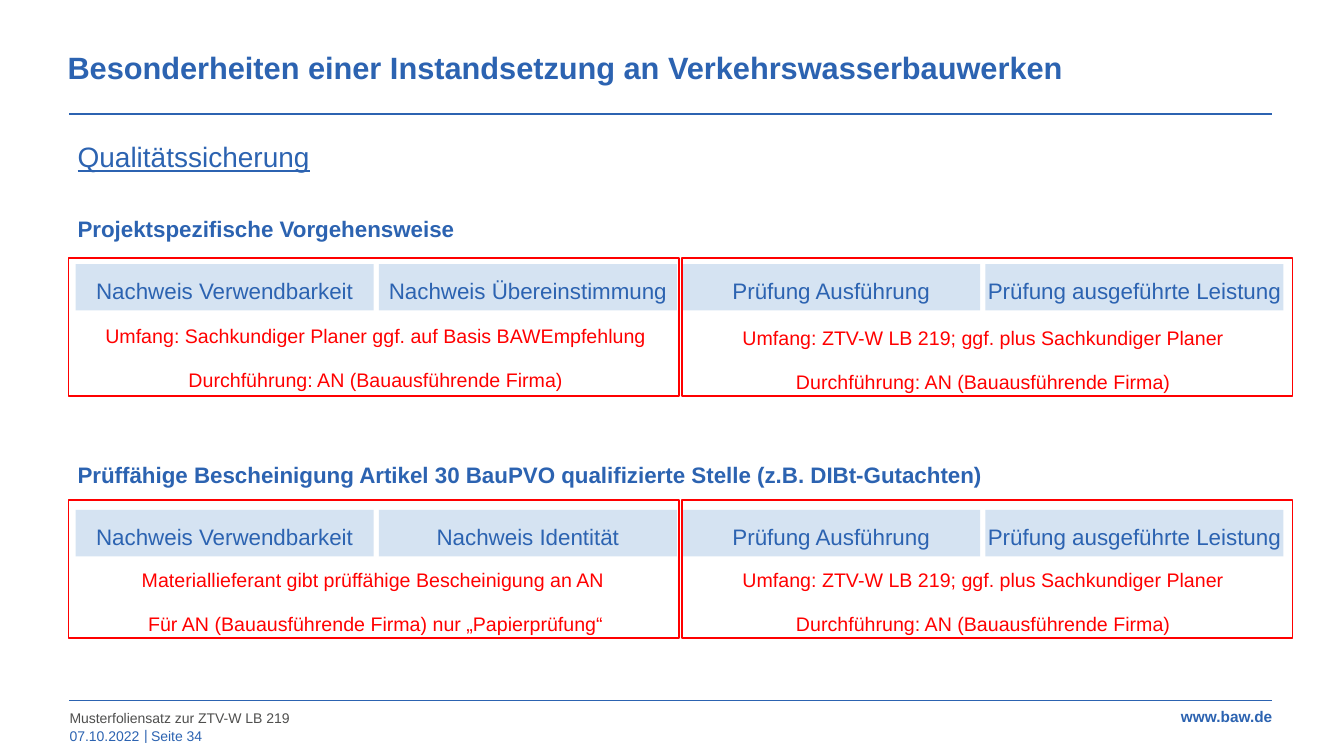
from lxml.etree import SubElement
from pptx import Presentation
from pptx.dml.color import RGBColor
from pptx.enum.shapes import MSO_CONNECTOR as Connector, MSO_SHAPE as Preset
from pptx.enum.text import MSO_ANCHOR as Anchor, MSO_AUTO_SIZE as AutoSize, PP_ALIGN as Align
from pptx.oxml.ns import qn
from pptx.util import Inches, Pt

BLUE, PALE, RED, GREY = "2C63B1", "D5E3F2", "FF0000", "4F4F4E"


def colour(target, code):
    target.rgb = RGBColor.from_string(code)


class SlideBuilder:
    font_name = "Arial"

    def __init__(self, slide):
        self.slide = slide

    def fill_text(self, shape, lines, size, code, align=Align.LEFT, spacing=1.0,
                  before=0, inset=(0, 0), anchor=Anchor.TOP, **look):
        frame = shape.text_frame
        across, down = map(Inches, inset)
        layout = {"word_wrap": True, "auto_size": AutoSize.NONE, "vertical_anchor": anchor,
                  "margin_left": across, "margin_right": across,
                  "margin_top": down, "margin_bottom": down}
        for name, value in layout.items():
            setattr(frame, name, value)
        for index, line in enumerate(lines):
            paragraph = frame.paragraphs[0] if index == 0 else frame.add_paragraph()
            paragraph.text = line
            rules = {"alignment": align, "line_spacing": spacing,
                     "space_before": Pt(before if index else 0)}
            for name, value in rules.items():
                setattr(paragraph, name, value)
            font = paragraph.runs[0].font
            for name, value in {"name": self.font_name, "size": Pt(size), **look}.items():
                setattr(font, name, value)
            colour(font.color, code)

    def text(self, place, lines, size, code, **look):
        box = self.slide.shapes.add_textbox(*map(Inches, place))
        self.fill_text(box, lines, size, code, **look)

    def placeholder(self, index, place, line, size, **look):
        holder = self.slide.placeholders[index]
        for name, value in zip(("left", "top", "width", "height"), place):
            setattr(holder, name, Inches(value))
        self.fill_text(holder, [line], size, BLUE, **look)
        return holder

    def rectangle(self, place):
        shape = self.slide.shapes.add_shape(Preset.RECTANGLE, *map(Inches, place))
        shape.shadow.inherit = False
        return shape

    def band(self, place, label):
        shape = self.rectangle(place)
        shape.fill.solid()
        colour(shape.fill.fore_color, PALE)
        shape.line.fill.background()
        self.fill_text(shape, [label], 16, BLUE, align=Align.CENTER, spacing=1.5)

    def frame(self, place):
        shape = self.rectangle(place)
        shape.fill.background()
        colour(shape.line.color, RED)
        shape.line.width = Pt(1)

    def rule(self, top):
        line = self.slide.shapes.add_connector(
            Connector.STRAIGHT, *map(Inches, (0.69, top, 12.63, top)))
        colour(line.line.color, BLUE)
        line.line.width = Pt(1)
        SubElement(line._element.spPr, qn("a:effectLst"))


def main():
    deck = Presentation()
    deck.slide_width, deck.slide_height = Inches(13.34), Inches(7.5)
    page = SlideBuilder(deck.slides.add_slide(deck.slide_layouts[1]))

    page.placeholder(0, (0.67, 0.45, 11.95, 0.47),
                     "Besonderheiten einer Instandsetzung an Verkehrswasserbauwerken",
                     22, spacing=1.1, bold=True)
    topic = page.placeholder(1, (0.67, 1.17, 11.95, 0.54), "Qualitätssicherung",
                             20, spacing=1.5, inset=(0.1, 0.05), underline=True)
    properties = topic.text_frame.paragraphs[0]._p.get_or_add_pPr()
    for name in ("marL", "indent"):
        properties.set(name, "0")
    SubElement(properties, qn("a:buNone"))

    for top in (1.13, 6.95):
        page.rule(top)

    execution = "Durchführung: AN (Bauausführende Firma)"
    inspection = ["Umfang: ZTV-W LB 219; ggf. plus Sachkundiger Planer", execution]
    checks = ["Prüfung Ausführung", "Prüfung ausgeführte Leistung"]
    procedures = [
        (2.0, 2.56, "Projektspezifische Vorgehensweise",
         ["Nachweis Verwendbarkeit", "Nachweis Übereinstimmung"],
         ["Umfang: Sachkundiger Planer ggf. auf Basis BAWEmpfehlung", execution], (3.1, 3.12)),
        (4.44, 4.96,
         "Prüffähige Bescheinigung Artikel 30 BauPVO qualifizierte Stelle (z.B. DIBt-Gutachten)",
         ["Nachweis Verwendbarkeit", "Nachweis Identität"],
         ["Materiallieferant gibt prüffähige Bescheinigung an AN ",
          "Für AN (Bauausführende Firma) nur „Papierprüfung“"], (5.52, 5.52)),
    ]
    for top, frame_top, heading, proofs, proof_notes, note_tops in procedures:
        page.text((0.77, top, 9.87, 0.46), [heading], 16, BLUE, spacing=1.5, bold=True)
        for column, label in enumerate(proofs + checks):
            page.band((0.75 + 3.01 * column, top + 0.62, 2.96, 0.46), label)
        halves = zip((0.68, 6.77), (0.9, 6.93), note_tops, (proof_notes, inspection))
        for frame_left, note_left, note_top, notes in halves:
            page.frame((frame_left, frame_top, 6.06, 1.37))
            page.text((note_left, note_top, 5.66, 0.75), notes, 14, RED,
                      align=Align.CENTER, spacing=1.5, before=6)

    footer = [
        ((0.69, 7.04, 10.79, 0.16), "Musterfoliensatz zur ZTV-W LB 219", GREY),
        ((0.69, 7.22, 0.72, 0.16), "07.10.2022", BLUE),
        ((1.43, 7.21, 0.05, 0.16), "|", BLUE),
        ((1.5, 7.22, 0.71, 0.16), "Seite 34", BLUE),
    ]
    for place, label, code in footer:
        page.text(place, [label], 10, code, anchor=Anchor.MIDDLE)
    page.text((11.65, 7.03, 0.98, 0.16), ["www.baw.de"], 11, BLUE,
              align=Align.RIGHT, anchor=Anchor.MIDDLE, bold=True)

    deck.save("out.pptx")


if __name__ == "__main__":
    main()
